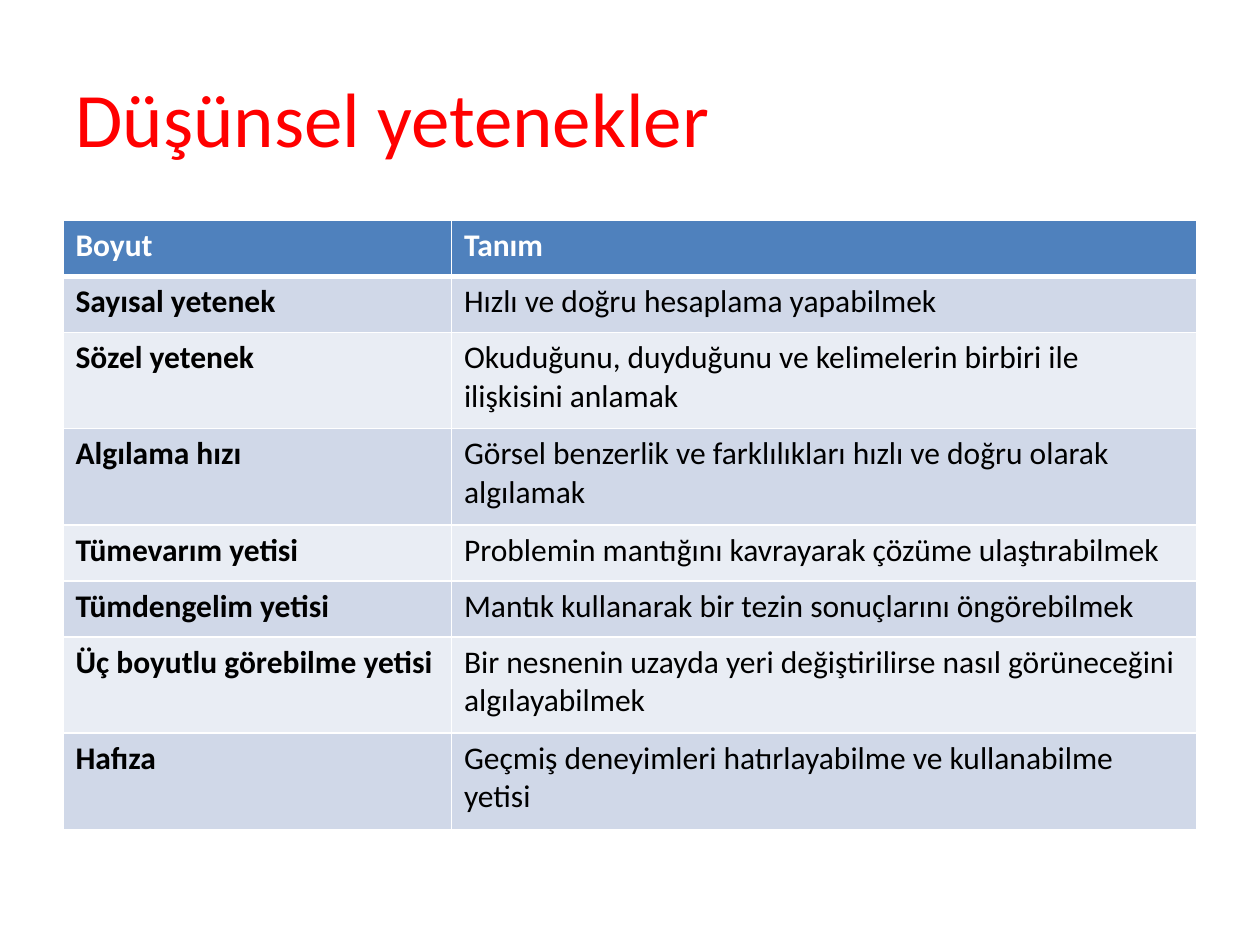
from dataclasses import dataclass

from lxml import etree
from pptx import Presentation
from pptx.dml.color import RGBColor
from pptx.enum.text import MSO_ANCHOR
from pptx.oxml.ns import qn
from pptx.util import Pt

MIDDLE = MSO_ANCHOR.MIDDLE
FONT = "Calibri"
RED, WHITE, BLACK = "FF0000", "FFFFFF", "000000"
HEADER_BLUE = "4F81BD"
BANDS = ("D0D8E8", "E9EDF4")
LEFT, WIDTH = 36, 648
COLUMN_WIDTHS = (222, 426)
LINE_HEIGHTS = {1: 32, 2: 55}
THIN, THICK = 1, 3


@dataclass
class Ability:
    name: str
    definition: str
    lines: int = 1


HEADER = Ability("Boyut", "Tanım")
ABILITIES = [
    Ability("Sayısal yetenek", "Hızlı ve doğru hesaplama yapabilmek"),
    Ability("Sözel yetenek", "Okuduğunu, duyduğunu ve kelimelerin birbiri ile ilişkisini anlamak", 2),
    Ability("Algılama hızı", "Görsel benzerlik ve farklılıkları hızlı ve doğru olarak algılamak", 2),
    Ability("Tümevarım yetisi", "Problemin mantığını kavrayarak çözüme ulaştırabilmek"),
    Ability("Tümdengelim yetisi", "Mantık kullanarak bir tezin sonuçlarını öngörebilmek"),
    Ability("Üç boyutlu görebilme yetisi",
            "Bir nesnenin uzayda yeri değiştirilirse nasıl görüneceğini algılayabilmek", 2),
    Ability("Hafıza", "Geçmiş deneyimleri hatırlayabilme ve kullanabilme yetisi", 2),
]


def color(value: str) -> RGBColor:
    return RGBColor.from_string(value)


def write(frame, text: str, size: float, ink: str, bold: bool = False) -> None:
    frame.text = text
    font = frame.paragraphs[0].runs[0].font
    font.name, font.size, font.bold = FONT, Pt(size), bold
    font.color.rgb = color(ink)


def set_borders(cell, top: float, bottom: float) -> None:
    properties = cell._tc.get_or_add_tcPr()
    widths = {"lnL": THIN, "lnR": THIN, "lnT": top, "lnB": bottom}
    for side, width in widths.items():
        line = etree.SubElement(properties, qn(f"a:{side}"), w=str(Pt(width)))
        fill = etree.SubElement(line, qn("a:solidFill"))
        etree.SubElement(fill, qn("a:srgbClr"), val=WHITE)


def add_title(page, text: str) -> None:
    box = page.shapes.add_textbox(Pt(LEFT), Pt(21.6), Pt(WIDTH), Pt(90))
    frame = box.text_frame
    frame.word_wrap = True
    frame.vertical_anchor = MIDDLE
    write(frame, text, 44, RED)


def add_ability_table(page, records: list[Ability]) -> None:
    heights = [LINE_HEIGHTS[record.lines] for record in records]
    table = page.shapes.add_table(len(records), len(COLUMN_WIDTHS), Pt(LEFT), Pt(126),
                                  Pt(WIDTH), Pt(sum(heights))).table
    for column, width in zip(table.columns, COLUMN_WIDTHS):
        column.width = Pt(width)
    for index, record in enumerate(records):
        table.rows[index].height = Pt(heights[index])
        is_header = index == 0
        background = HEADER_BLUE if is_header else BANDS[(index - 1) % 2]
        for position, text in enumerate((record.name, record.definition)):
            cell = table.cell(index, position)
            # The thick rule lies between the header and the first ability
            set_borders(cell, THICK if index == 1 else THIN, THICK if is_header else THIN)
            cell.fill.solid()
            cell.fill.fore_color.rgb = color(background)
            write(cell.text_frame, text, 18, WHITE if is_header else BLACK,
                  bold=is_header or position == 0)


def main() -> None:
    deck = Presentation()
    deck.slide_width, deck.slide_height = Pt(720), Pt(540)
    page = deck.slides.add_slide(deck.slide_layouts[6])

    # Title
    add_title(page, "Düşünsel yetenekler")

    # Abilities and their definitions
    add_ability_table(page, [HEADER, *ABILITIES])

    deck.save("out.pptx")


if __name__ == "__main__":
    main()
